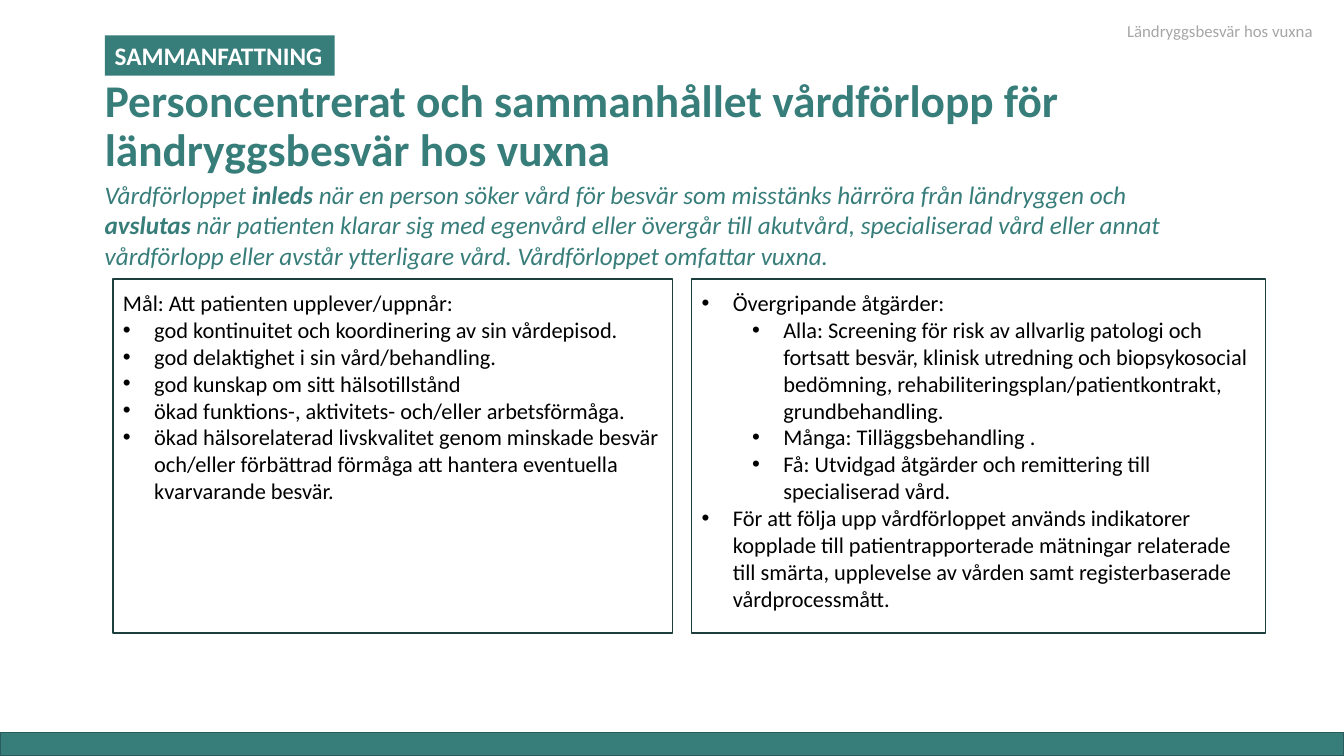
from dataclasses import dataclass

from lxml import etree
from pptx import Presentation
from pptx import util as u
from pptx.dml.color import RGBColor
from pptx.enum import shapes, text
from pptx.oxml.ns import qn


@dataclass(frozen=True)
class Theme:
    font: str = "Calibri"
    teal: str = "377D7A"
    edge: str = "295C5A"
    frame: str = "1C3E3D"
    white: str = "FFFFFF"
    black: str = "000000"
    grey: str = "A6A6A6"
    title: float = 32.4
    lead: float = 18
    body: float = 16
    small: float = 12


def apply(item, values):
    for name, value in values.items():
        setattr(item, name, value)


class Deck:
    def __init__(self, theme):
        self.theme = theme
        self.file = Presentation()
        self.file.slide_width = u.Inches(13.33)
        self.file.slide_height = u.Inches(7.5)
        self.slide = self.file.slides.add_slide(self.file.slide_layouts[3])

    def area(self, left, top, width, height):
        wide, high = self.file.slide_width, self.file.slide_height
        return [int(wide * left / 100), int(high * top / 100),
                int(wide * width / 100), int(high * height / 100)]

    def paint(self, shape, fill, line=None):
        shape.fill.solid()
        shape.fill.fore_color.rgb = RGBColor.from_string(fill)
        if line:
            shape.line.color.rgb = RGBColor.from_string(line)
            shape.line.width = u.Pt(1)
        else:
            shape.line.fill.background()

    def place(self, index, box):
        holder = self.slide.placeholders[index]
        apply(holder, dict(zip(("left", "top", "width", "height"), self.area(*box))))
        return holder

    def frame(self, shape, **values):
        base = dict(word_wrap=True, auto_size=text.MSO_AUTO_SIZE.NONE,
                    vertical_anchor=text.MSO_ANCHOR.TOP,
                    margin_left=u.Inches(0.1), margin_right=u.Inches(0.1),
                    margin_top=u.Inches(0.05), margin_bottom=u.Inches(0.05))
        apply(shape.text_frame, base | values)
        return shape.text_frame

    def line(self, frame, first, runs, size, color, bold=False, italic=False, **values):
        para = frame.paragraphs[0] if first else frame.add_paragraph()
        base = dict(alignment=text.PP_ALIGN.LEFT, line_spacing=1.0,
                    space_before=u.Pt(0), space_after=u.Pt(0))
        apply(para, base | values)
        for words, strong in runs:
            run = para.add_run()
            run.text = words
            apply(run.font, dict(name=self.theme.font, size=u.Pt(size),
                                 bold=bold or strong, italic=italic))
            run.font.color.rgb = RGBColor.from_string(color)
        return para

    def title(self, box, words):
        frame = self.frame(self.place(0, box), vertical_anchor=text.MSO_ANCHOR.BOTTOM)
        self.line(frame, True, [(words, False)], self.theme.title, self.theme.teal,
                  bold=True, line_spacing=0.9)

    def panel(self, index, box, items):
        holder = self.place(index, box)
        self.paint(holder, self.theme.white, self.theme.frame)
        frame = self.frame(holder, margin_top=u.Inches(0.1))
        for order, (level, mark, words) in enumerate(items):
            para = self.line(frame, order == 0, [(words, False)],
                             self.theme.body, self.theme.black, level=level)
            props = para._p.get_or_add_pPr()
            props.set("marL", str(u.Inches(0.31 + 0.5 * level)))
            props.set("indent", str(u.Inches(-0.31)))
            if mark:
                etree.SubElement(props, qn("a:buFont"), typeface="Arial")
                etree.SubElement(props, qn("a:buChar"), char=mark)
            else:
                etree.SubElement(props, qn("a:buNone"))

    def label(self, box, runs, size, color, italic=False):
        shape = self.slide.shapes.add_textbox(*self.area(*box))
        self.line(self.frame(shape), True, runs, size, color, italic=italic)

    def block(self, box, fill, line=None, words=None):
        shape = self.slide.shapes.add_shape(shapes.MSO_SHAPE.RECTANGLE, *self.area(*box))
        shape.shadow.inherit = False
        self.paint(shape, fill, line)
        if words:
            self.line(self.frame(shape, word_wrap=False), True, [(words, False)],
                      self.theme.lead, self.theme.white, bold=True)


def main():
    theme = Theme()
    deck = Deck(theme)
    deck.block((0, 96.93, 100, 3.07), theme.teal, theme.edge)

    deck.title((7.05, 15.07, 78.1, 8.93),
               "Personcentrerat och sammanhållet vårdförlopp för ländryggsbesvär hos vuxna")
    goals = [
        (0, "", "Mål: Att patienten upplever/uppnår:"),
        (0, "•", "god kontinuitet och koordinering av sin vårdepisod."),
        (0, "•", "god delaktighet i sin vård/behandling."),
        (0, "•", "god kunskap om sitt hälsotillstånd"),
        (0, "•", "ökad funktions-, aktivitets- och/eller arbetsförmåga."),
        (0, "•", "ökad hälsorelaterad livskvalitet genom minskade besvär och/eller "
                 "förbättrad förmåga att hantera eventuella kvarvarande besvär."),
    ]
    steps = [
        (0, "•", "Övergripande åtgärder:"),
        (1, "•", "Alla: Screening för risk av allvarlig patologi och fortsatt besvär, "
                 "klinisk utredning och biopsykosocial bedömning, "
                 "rehabiliteringsplan/patientkontrakt, grundbehandling."),
        (1, "•", "Många: Tilläggsbehandling ."),
        (1, "•", "Få: Utvidgad åtgärder och remittering till specialiserad vård."),
        (0, "•", "För att följa upp vårdförloppet används indikatorer kopplade till "
                 "patientrapporterade mätningar relaterade till smärta, upplevelse av "
                 "vården samt registerbaserade vårdprocessmått."),
    ]
    deck.panel(1, (8.4, 36.93, 41.64, 46.8), goals)
    deck.panel(2, (51.46, 36.93, 42.69, 46.8), steps)

    lead = [
        ("Vårdförloppet ", False),
        ("inleds", True),
        (" när en person söker vård för besvär som misstänks härröra från ländryggen och ", False),
        ("avslutas ", True),
        ("när patienten klarar sig med egenvård eller övergår till akutvård, specialiserad "
         "vård eller annat vårdförlopp eller avstår ytterligare vård. "
         "Vårdförloppet omfattar vuxna.", False),
    ]
    deck.label((7.05, 23.07, 82.97, 13.47), lead, theme.lead, theme.teal, italic=True)
    deck.block((7.8, 4.67, 17.1, 5.33), theme.teal, words="SAMMANFATTNING")
    deck.label((83.12, 2.13, 15.45, 4), [("Ländryggsbesvär hos vuxna", False)],
               theme.small, theme.grey)
    deck.file.save("out.pptx")


if __name__ == "__main__":
    main()
